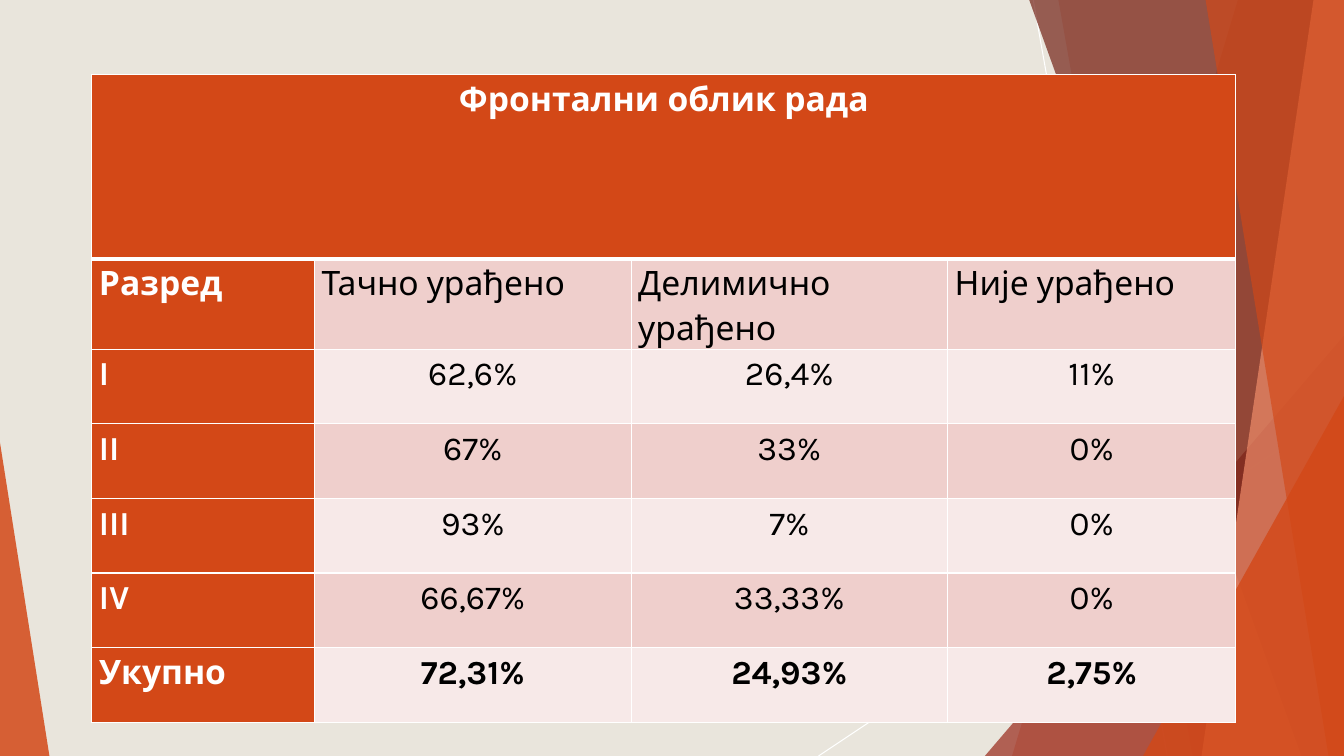
"""Build a slide with a results table over a faceted background."""
import dataclasses
import typing

import lxml.etree
import pptx
import pptx.dml.color
import pptx.enum.shapes
import pptx.enum.text
import pptx.oxml.ns
import pptx.util

RGB = pptx.dml.color.RGBColor
ALIGN = pptx.enum.text.PP_ALIGN
qn = pptx.oxml.ns.qn

CREAM = RGB(0xE9, 0xE5, 0xDC)
WHITE = RGB(0xFF, 0xFF, 0xFF)
BLACK = RGB(0x00, 0x00, 0x00)
ORANGE = RGB(0xD3, 0x48, 0x17)
SALMON = RGB(0xEF, 0x8C, 0x6A)
BRICK = RGB(0x9B, 0x2D, 0x1F)
MAROON = RGB(0x74, 0x22, 0x17)
BAND_DARK = RGB(0xEF, 0xCF, 0xCC)
BAND_LIGHT = RGB(0xF7, 0xE9, 0xE8)

SLIDE_W = pptx.util.Inches(13.33)
SLIDE_H = pptx.util.Inches(7.5)


@dataclasses.dataclass
class Ray:
    x1: float
    y1: float
    x2: float
    y2: float


@dataclasses.dataclass
class Facet:
    top_x: float
    bottom_x: float
    color: RGB
    opacity: int


@dataclasses.dataclass
class Wedge:
    left: float
    top: float
    width: float
    apex: float
    color: RGB
    opacity: int


BACKDROP = [
    Ray(76.88, 0, 86.85, 100),
    Ray(100, 53.73, 60.9, 100),
    Facet(92.1, 75.3, ORANGE, 30),
    Facet(78.75, 88.73, ORANGE, 20),
    Wedge(73.28, 44.4, 26.72, 1, BRICK, 72),
    Facet(76.58, 96.83, MAROON, 70),
    Facet(97.73, 89.4, SALMON, 70),
    Facet(89.7, 98.85, ORANGE, 65),
    Wedge(85.05, 52.4, 14.95, 1, ORANGE, 80),
    Wedge(0, 58.53, 3.68, 0, ORANGE, 85),
]

TABLE_LEFT, TABLE_TOP = 6.83, 9.87
COLUMNS = [16.58, 23.55, 23.55, 21.45]
TITLE_ROW, BODY_ROW = 24.4, 9.87
INSET = 0.53
ROWS = [
    ["Фронтални облик рада", "", "", ""],
    ["Разред", "Тачно урађено", "Делимично урађено", "Није урађено"],
    ["I", "62,6%", "26,4%", "11%"],
    ["II", "67%", "33%", "0%"],
    ["III", "93%", "7%", "0%"],
    ["IV", "66,67%", "33,33%", "0%"],
    ["Укупно", "72,31%", "24,93%", "2,75%"],
]


def across(share: float) -> int:
    return pptx.util.Emu(round(SLIDE_W * share / 100))


def down(share: float) -> int:
    return pptx.util.Emu(round(SLIDE_H * share / 100))


def set_all(target: typing.Any, values: dict) -> None:
    for name, value in values.items():
        setattr(target, name, value)


def paint(sp: typing.Any, color: RGB, opacity: int) -> None:
    sp.shadow.inherit = False
    sp.line.fill.background()
    sp.fill.solid()
    sp.fill.fore_color.rgb = color
    clr = sp._element.spPr.find(qn("a:solidFill")).find(qn("a:srgbClr"))
    lxml.etree.SubElement(clr, qn("a:alpha"), val=str(opacity * 1000))


def draw_ray(shapes: typing.Any, ray: Ray) -> None:
    line = shapes.add_connector(
        pptx.enum.shapes.MSO_CONNECTOR.STRAIGHT,
        across(ray.x1), down(ray.y1), across(ray.x2), down(ray.y2))
    line.line.color.rgb = WHITE
    line.line.width = pptx.util.Pt(0.75)
    lxml.etree.SubElement(line._element.spPr, qn("a:effectLst"))


def draw_facet(shapes: typing.Any, facet: Facet) -> None:
    outline = shapes.build_freeform(across(facet.top_x), 0)
    outline.add_line_segments(
        [(SLIDE_W, 0), (SLIDE_W, SLIDE_H), (across(facet.bottom_x), SLIDE_H)])
    paint(outline.convert_to_shape(), facet.color, facet.opacity)


def draw_wedge(shapes: typing.Any, wedge: Wedge) -> None:
    sp = shapes.add_shape(
        pptx.enum.shapes.MSO_SHAPE.ISOSCELES_TRIANGLE, across(wedge.left),
        down(wedge.top), across(wedge.width), down(100 - wedge.top))
    sp.adjustments[0] = wedge.apex
    paint(sp, wedge.color, wedge.opacity)


def add_borders(cell: typing.Any, widths: dict[str, int]) -> None:
    tc_pr = cell._tc.get_or_add_tcPr()
    for i, (side, width) in enumerate(widths.items()):
        ln = lxml.etree.Element(qn(f"a:ln{side}"), w=str(pptx.util.Pt(width)))
        fill = lxml.etree.SubElement(ln, qn("a:solidFill"))
        lxml.etree.SubElement(fill, qn("a:srgbClr"), val=str(WHITE))
        tc_pr.insert(i, ln)


def fill_cell(cell: typing.Any, text: str, row: int, col: int) -> None:
    heading = row == 0 or col == 0
    band = BAND_DARK if row % 2 else BAND_LIGHT
    set_all(cell, {"margin_left": across(INSET), "margin_right": across(INSET),
                   "margin_top": 0, "margin_bottom": 0})
    cell.fill.solid()
    cell.fill.fore_color.rgb = ORANGE if heading else band
    add_borders(cell, {"L": 1, "R": 1, "T": 3 if row == 1 else 1,
                       "B": 3 if row == 0 else 1})
    if not text:
        return
    p = cell.text_frame.paragraphs[0]
    centred = row == 0 or (row > 1 and col > 0)
    set_all(p, {"line_spacing": 1.15,
                "alignment": ALIGN.CENTER if centred else ALIGN.LEFT})
    r = p.add_run()
    r.text = text
    set_all(r.font, {"name": "Karla", "size": pptx.util.Pt(24),
                     "bold": heading or row == len(ROWS) - 1})
    r.font.color.rgb = WHITE if heading else BLACK


def draw_table(shapes: typing.Any) -> None:
    heights = [TITLE_ROW] + [BODY_ROW] * (len(ROWS) - 1)
    table = shapes.add_table(
        len(ROWS), len(COLUMNS), across(TABLE_LEFT), down(TABLE_TOP),
        across(sum(COLUMNS)), down(sum(heights))).table
    for column, share in zip(table.columns, COLUMNS):
        column.width = across(share)
    for table_row, share in zip(table.rows, heights):
        table_row.height = down(share)
    table.cell(0, 0).merge(table.cell(0, len(COLUMNS) - 1))
    for row, texts in enumerate(ROWS):
        for col, text in enumerate(texts):
            fill_cell(table.cell(row, col), text, row, col)


def main() -> None:
    prs = pptx.Presentation()
    set_all(prs, {"slide_width": SLIDE_W, "slide_height": SLIDE_H})
    s = prs.slides.add_slide(prs.slide_layouts[6])
    s.background.fill.solid()
    s.background.fill.fore_color.rgb = CREAM
    draw = {Ray: draw_ray, Facet: draw_facet, Wedge: draw_wedge}
    for item in BACKDROP:
        draw[type(item)](s.shapes, item)
    draw_table(s.shapes)
    prs.save("out.pptx")


if __name__ == "__main__":
    main()
